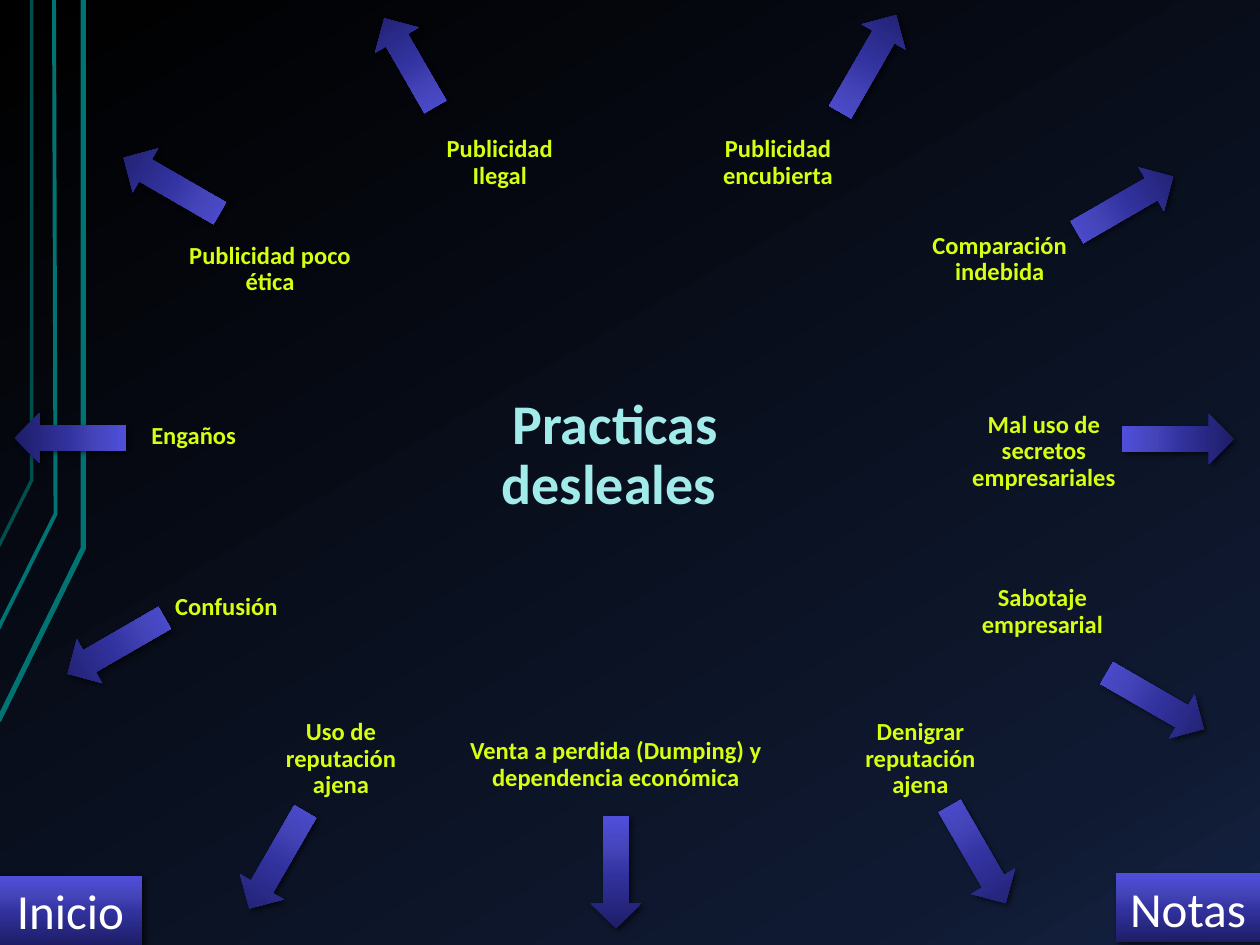
"""Build the slide on unfair commercial practices."""
from dataclasses import dataclass

from lxml.etree import SubElement
from pptx import Presentation
from pptx.dml.color import RGBColor
from pptx.enum.shapes import MSO_SHAPE
from pptx.enum.text import MSO_ANCHOR, PP_ALIGN
from pptx.oxml.ns import qn
from pptx.util import Cm, Pt

WHITE = RGBColor(0xFF, 0xFF, 0xFF)
LIME = RGBColor(0xD7, 0xFF, 0x11)
AQUA = RGBColor(0xA1, 0xEB, 0xEB)
TEAL = RGBColor(0x00, 0x73, 0x73)
DARK_TEAL = RGBColor(0x00, 0x4F, 0x4F)
BLACK = RGBColor(0x00, 0x00, 0x00)
NIGHT = [(0, BLACK), (85, RGBColor(0x0F, 0x19, 0x31)), (100, RGBColor(0x14, 0x22, 0x42))]
INDIGO = [
    (0, RGBColor(0x1D, 0x1D, 0x66)),
    (50, RGBColor(0x33, 0x33, 0xA1)),
    (70, RGBColor(0x44, 0x44, 0xB8)),
    (100, RGBColor(0x4F, 0x4F, 0xDD)),
]


@dataclass
class Label:
    text: str
    x: float
    y: float
    w: float = 3.99
    anchor: MSO_ANCHOR = MSO_ANCHOR.TOP


@dataclass
class Arrow:
    x: float
    y: float
    rotation: int
    h: float = 2.26


@dataclass
class Stripe:
    points: list[tuple[float, float]]
    width: float
    color: RGBColor


@dataclass
class Button:
    text: str
    x: float
    y: float


STRIPES = [
    Stripe([(-0.03, 14.53), (1.68, 11.05), (1.68, 0)], 3, TEAL),
    Stripe([(-0.03, 12.67), (1.12, 10.36), (1.09, 0)], 2.25, TEAL),
    Stripe([(-0.03, 11.02), (0.64, 9.68), (0.64, 0)], 2, DARK_TEAL),
]
LABELS = [
    Label("Engaños", 1.91, 8.36),
    Label("Confusión", 2.57, 11.81),
    Label("Uso de reputación ajena", 4.88, 14.33),
    Label("Denigrar reputación ajena", 16.56, 14.33),
    Label("Comparación indebida", 18.16, 4.52),
    Label("Mal uso de secretos empresariales", 19.18, 8.13, w=3.73),
    Label("Sabotaje empresarial", 19.02, 11.63),
    Label("Publicidad encubierta", 13.69, 2.49, anchor=MSO_ANCHOR.MIDDLE),
    Label("Publicidad Ilegal", 8.08, 2.49, anchor=MSO_ANCHOR.MIDDLE),
    Label("Publicidad poco ética", 3.45, 4.72),
    Label("Venta a perdida (Dumping) y dependencia económica", 8.92, 14.71, w=6.99),
]
ARROWS = [
    Arrow(11.91, 16.46, 0),
    Arrow(5.08, 16.21, 30),
    Arrow(1.83, 11.89, 60),
    Arrow(0.91, 7.7, 90),
    Arrow(2.95, 2.62, 120, h=2.24),
    Arrow(7.75, 0.23, 150, h=2.06),
    Arrow(16.99, 0.15, 210),
    Arrow(22.17, 3, 240, h=2.24),
    Arrow(23.24, 7.72, 270),
    Arrow(22.78, 13, 300),
    Arrow(19.2, 16.1, 330),
]
BUTTONS = [Button("Notas", 22.5, 17.6), Button("Inicio", -0.03, 17.65)]


def set_gradient(fill, element, stops: list[tuple[int, RGBColor]], angle: int) -> None:
    fill.gradient()
    fill.gradient_angle = angle
    gs_list = element.find(".//" + qn("a:gsLst"))
    for gs in list(gs_list):
        gs_list.remove(gs)
    for position, color in stops:
        gs = SubElement(gs_list, qn("a:gs"), pos=str(position * 1000))
        SubElement(gs, qn("a:srgbClr"), val=str(color))


def add_shadow(sp) -> None:
    sp.shadow.inherit = False
    effects = sp._element.spPr.find(qn("a:effectLst"))
    shadow = SubElement(effects, qn("a:outerShdw"), blurRad=str(Pt(3)), dist=str(Pt(2)),
                        dir=str(45 * 60000), rotWithShape="0")
    color = SubElement(shadow, qn("a:srgbClr"), val=str(BLACK))
    SubElement(color, qn("a:alpha"), val="60000")


def write(sp, text: str, *, size: float, color: RGBColor, bold: bool = False,
          anchor: MSO_ANCHOR = MSO_ANCHOR.TOP, spacing: float = 1.0) -> None:
    tf = sp.text_frame
    tf.word_wrap = True
    tf.vertical_anchor = anchor
    p = tf.paragraphs[0]
    p.alignment = PP_ALIGN.CENTER
    p.line_spacing = spacing
    r = p.add_run()
    r.text = text
    r.font.name = "Calibri"
    r.font.size = Pt(size)
    r.font.bold = bold
    r.font.color.rgb = color


def add_text(s, text: str, x: float, y: float, w: float, h: float, **style) -> None:
    sp = s.shapes.add_textbox(Cm(x), Cm(y), Cm(w), Cm(h))
    tf = sp.text_frame
    tf.margin_left = tf.margin_right = Cm(0.33)
    tf.margin_top = tf.margin_bottom = Cm(0.18)
    write(sp, text, bold=True, spacing=0.9, **style)


def add_glossy(s, kind: MSO_SHAPE, x: float, y: float, w: float, h: float):
    sp = s.shapes.add_shape(kind, Cm(x), Cm(y), Cm(w), Cm(h))
    set_gradient(sp.fill, sp._element, INDIGO, 90)
    sp.line.fill.background()
    add_shadow(sp)
    return sp


def add_stripe(s, stripe: Stripe) -> None:
    start, *rest = [(Cm(x), Cm(y)) for x, y in stripe.points]
    builder = s.shapes.build_freeform(*start)
    builder.add_line_segments(rest, close=False)
    sp = builder.convert_to_shape()
    sp.shadow.inherit = False
    sp.fill.background()
    sp.line.color.rgb = stripe.color
    sp.line.width = Pt(stripe.width)


def main() -> None:
    prs = Presentation()
    prs.slide_width, prs.slide_height = Cm(25.4), Cm(19.05)
    s = prs.slides.add_slide(prs.slide_layouts[6])
    set_gradient(s.background.fill, s._element, NIGHT, 300)
    for stripe in STRIPES:
        add_stripe(s, stripe)
    for label in LABELS:
        add_text(s, label.text, label.x, label.y, label.w, 1.6,
                 size=14, color=LIME, anchor=label.anchor)
    add_text(s, "Practicas desleales ", 9.09, 7.8, 6.63, 2.06, size=32, color=AQUA)
    for arrow in ARROWS:
        sp = add_glossy(s, MSO_SHAPE.DOWN_ARROW, arrow.x, arrow.y, 1.02, arrow.h)
        sp.rotation = arrow.rotation
    for button in BUTTONS:
        sp = add_glossy(s, MSO_SHAPE.ACTION_BUTTON_CUSTOM, button.x, button.y, 2.9, 1.4)
        write(sp, button.text, size=28, color=WHITE, anchor=MSO_ANCHOR.MIDDLE)
    prs.save("out.pptx")


if __name__ == "__main__":
    main()
